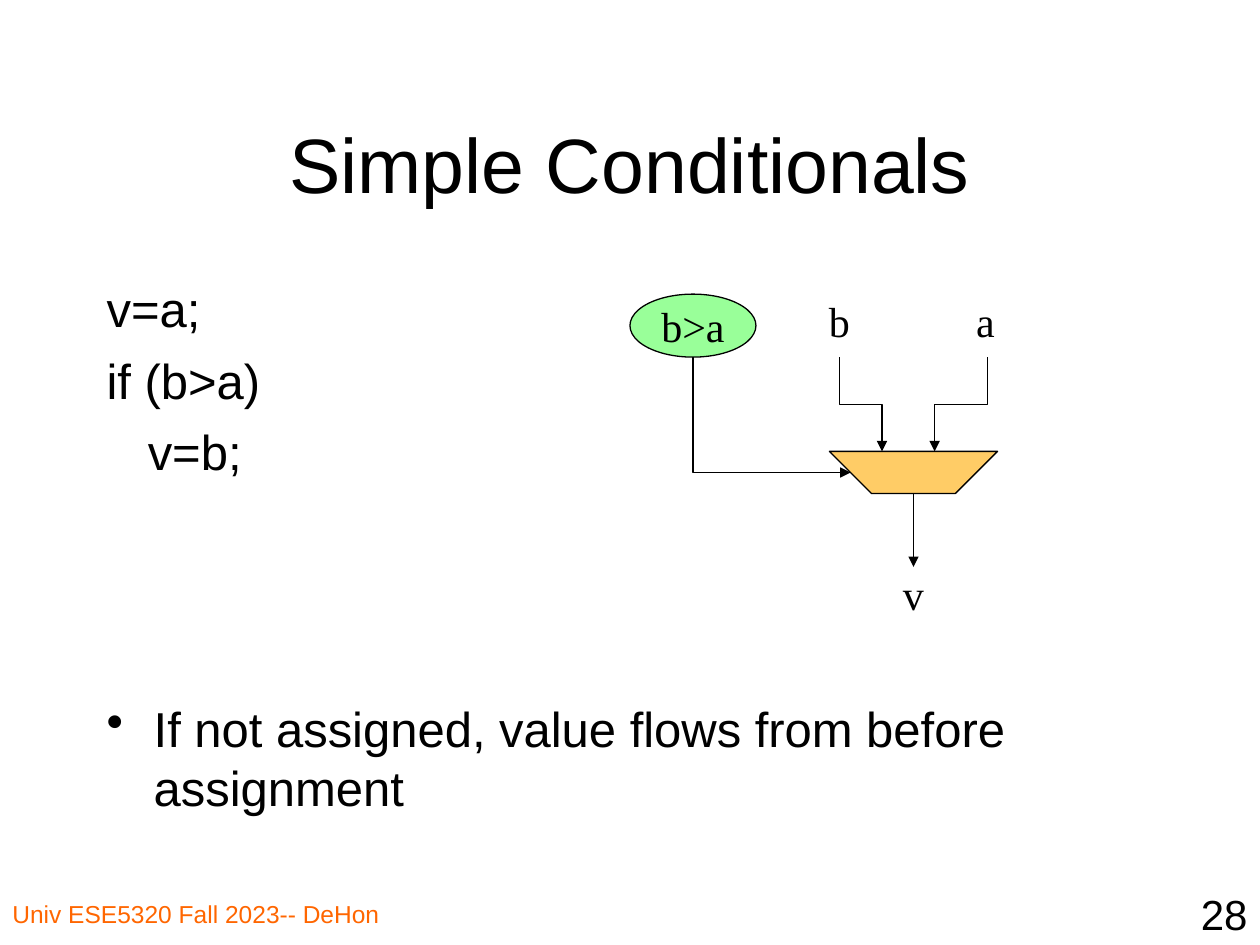
from lxml import etree
from pptx import Presentation
from pptx.dml.color import RGBColor
from pptx.enum.shapes import MSO_CONNECTOR, MSO_SHAPE
from pptx.enum.text import MSO_ANCHOR, MSO_AUTO_SIZE, PP_ALIGN
from pptx.oxml.ns import qn
from pptx.util import Cm, Pt

ELBOW, STRAIGHT = MSO_CONNECTOR.ELBOW, MSO_CONNECTOR.STRAIGHT
OVAL = MSO_SHAPE.OVAL
MIDDLE, TOP = MSO_ANCHOR.MIDDLE, MSO_ANCHOR.TOP
LEFT, CENTER, RIGHT = PP_ALIGN.LEFT, PP_ALIGN.CENTER, PP_ALIGN.RIGHT
FIT_SHAPE = MSO_AUTO_SIZE.SHAPE_TO_FIT_TEXT


def rgb(value):
    return RGBColor.from_string(value)


class Deck:
    sans, serif = "Arial", "Times New Roman"
    ink = "000000"
    line_width = Pt(0.75)

    def __init__(self, width, height):
        self.prs = Presentation()
        self.prs.slide_width, self.prs.slide_height = Cm(width), Cm(height)

    def add_slide(self):
        self.s = self.prs.slides.add_slide(self.prs.slide_layouts[5])

    def format(self, tf, size, font, color=ink, align=LEFT, anchor=TOP):
        tf.vertical_anchor = anchor
        for p in tf.paragraphs:
            p.alignment = align
            for r in p.runs:
                r.font.size, r.font.name = Pt(size), font
                r.font.color.rgb = rgb(color)

    def outline(self, sp):
        sp.line.color.rgb = rgb(self.ink)
        sp.line.width = self.line_width

    def title(self, text, x, y, w, h):
        sp = self.s.shapes.title
        sp.left, sp.top, sp.width, sp.height = Cm(x), Cm(y), Cm(w), Cm(h)
        sp.text_frame.text = text
        self.format(sp.text_frame, 44, self.sans, align=CENTER, anchor=MIDDLE)

    def text(self, text, x, y, w, h, size, font=sans, color=ink, align=LEFT):
        sp = self.s.shapes.add_textbox(Cm(x), Cm(y), Cm(w), Cm(h))
        tf = sp.text_frame
        tf.word_wrap = True
        tf.text = text
        self.format(tf, size, font, color, align)
        return tf

    def label(self, text, x, y, w):
        tf = self.text(text, x, y, w, 1.27, 24, self.serif)
        tf.word_wrap = False
        tf.auto_size = FIT_SHAPE

    def paragraph(self, p, before, margin=0, bullet=None):
        """Set spacing and indent; a bullet hangs in the margin."""
        p.space_before = Pt(before)
        pPr = p._p.get_or_add_pPr()
        pPr.set("marL", str(Cm(margin)))
        pPr.set("indent", str(-Cm(margin) if bullet else 0))
        if bullet:
            etree.SubElement(pPr, qn("a:buChar")).set("char", bullet)

    def ellipse(self, text, x, y, w, h, fill):
        sp = self.s.shapes.add_shape(OVAL, Cm(x), Cm(y), Cm(w), Cm(h))
        sp.shadow.inherit = False
        sp.fill.solid()
        sp.fill.fore_color.rgb = rgb(fill)
        self.outline(sp)
        tf = sp.text_frame
        tf.word_wrap = False
        tf.text = text
        self.format(tf, 24, self.serif, align=CENTER, anchor=MIDDLE)

    def polygon(self, points, fill):
        start, *rest = [(Cm(x), Cm(y)) for x, y in points]
        builder = self.s.shapes.build_freeform(*start)
        builder.add_line_segments(rest, close=True)
        sp = builder.convert_to_shape()
        sp.shadow.inherit = False
        sp.fill.solid()
        sp.fill.fore_color.rgb = rgb(fill)
        self.outline(sp)

    def arrow(self, x1, y1, x2, y2, kind=STRAIGHT):
        cn = self.s.shapes.add_connector(kind, Cm(x1), Cm(y1), Cm(x2), Cm(y2))
        self.outline(cn)
        spPr = cn._element.spPr
        tail = etree.SubElement(spPr.find(qn("a:ln")), qn("a:tailEnd"))
        tail.set("type", "triangle")
        etree.SubElement(spPr, qn("a:effectLst"))
        return cn

    def elbow_down(self, x1, y1, x2, y2, preset="bentConnector3"):
        """Elbow that leaves downwards: a level one turned a quarter."""
        cx, cy = (x1 + x2) / 2, (y1 + y2) / 2
        half_w, half_h = (y2 - y1) / 2, abs(x2 - x1) / 2
        cn = self.arrow(cx - half_w, cy - half_h, cx + half_w, cy + half_h, ELBOW)
        spPr = cn._element.spPr
        spPr.find(qn("a:prstGeom")).set("prst", preset)
        xfrm = spPr.find(qn("a:xfrm"))
        rightward = x2 > x1
        xfrm.set("rot", str((270 if rightward else 90) * 60000))
        if rightward:
            xfrm.set("flipH", "1")


def main():
    deck = Deck(25.4, 19.05)
    deck.add_slide()
    deck.title("Simple Conditionals", 1.9, 1.69, 21.6, 3.18)
    deck.text("Univ ESE5320 Fall 2023-- DeHon", 0, 17.99, 9.74, 1.06, 14,
              color="FF6600")
    deck.text("28", 20.11, 17.78, 5.29, 1.27, 24, align=RIGHT)

    body = deck.text("v=a;\nif (b>a)\nv=b;\n"
                     "If not assigned, value flows from before assignment",
                     1.9, 5.5, 21.6, 11.43, 28)
    first, condition, branch, note = body.paragraphs
    deck.paragraph(first, 7)
    deck.paragraph(condition, 7)
    deck.paragraph(branch, 7, margin=0.83)
    deck.paragraph(note, 125, margin=0.95, bullet="•")

    # Multiplexer: b>a selects which of b and a reaches v
    inputs_y, mux_top, mux_bottom = 7.2, 9.1, 9.95
    mux_left, mux_right, slant = 16.72, 20.11, 0.85
    mux_center = (mux_left + mux_right) / 2
    deck.ellipse("b>a", 12.7, 5.93, 2.54, 1.27, "99FF99")
    deck.polygon([(mux_left, mux_top), (mux_left + slant, mux_bottom),
                  (mux_right - slant, mux_bottom), (mux_right, mux_top)],
                 "FFCC66")
    deck.elbow_down(13.97, inputs_y, mux_left + slant / 2,
                    (mux_top + mux_bottom) / 2, "bentConnector2")
    deck.elbow_down(16.93, inputs_y, 17.78, mux_top)
    deck.elbow_down(19.9, inputs_y, 18.84, mux_top)
    deck.arrow(mux_center, mux_bottom, mux_center, 11.43)
    for name, x, y, w in (("b", 16.46, 5.84, 0.94), ("a", 19.43, 5.84, 0.89),
                          ("v", 17.95, 11.33, 0.94)):
        deck.label(name, x, y, w)

    deck.prs.save("out.pptx")


if __name__ == "__main__":
    main()
